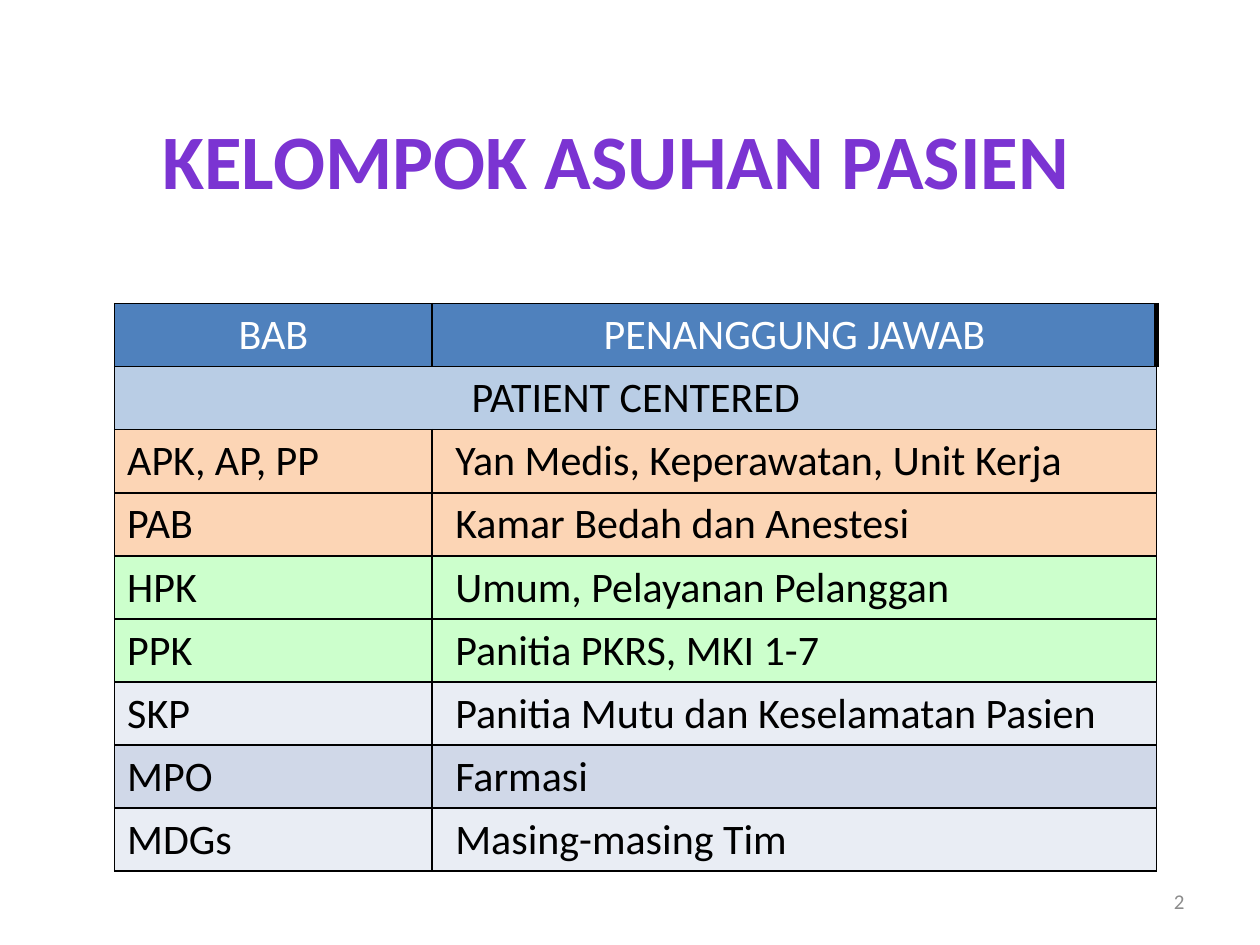
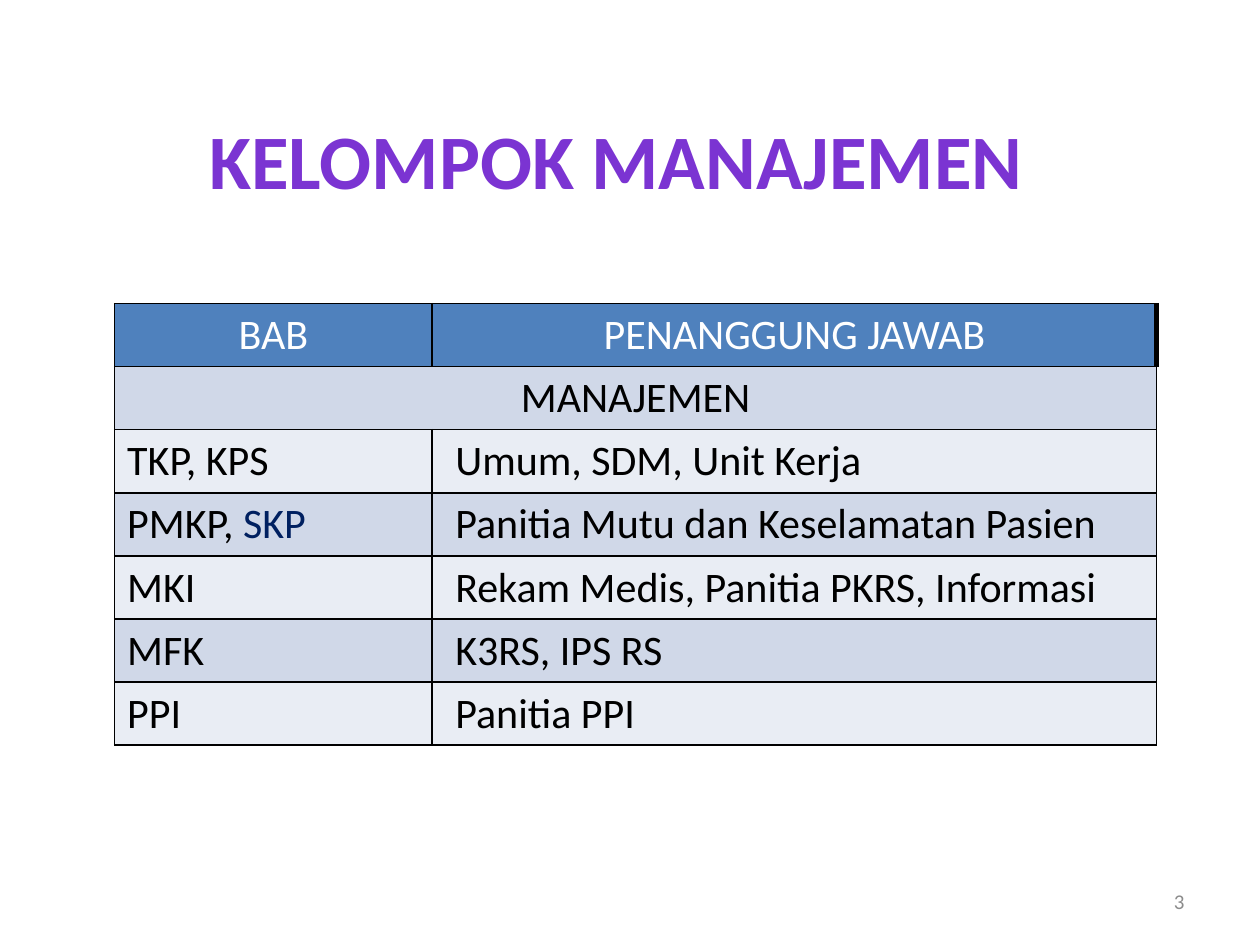
from dataclasses import dataclass

from lxml import etree
from pptx import Presentation
from pptx.dml.color import RGBColor
from pptx.enum.text import MSO_ANCHOR, MSO_AUTO_SIZE, PP_ALIGN
from pptx.oxml.ns import qn
from pptx.util import Pt

LEFT, CENTER, RIGHT = PP_ALIGN.LEFT, PP_ALIGN.CENTER, PP_ALIGN.RIGHT
MIDDLE = MSO_ANCHOR.MIDDLE
FIT_SHAPE = MSO_AUTO_SIZE.SHAPE_TO_FIT_TEXT

FONT = "Calibri"
BLACK = RGBColor(0x00, 0x00, 0x00)
WHITE = RGBColor(0xFF, 0xFF, 0xFF)
GREY = RGBColor(0x8C, 0x8C, 0x8C)
NAVY = RGBColor(0x00, 0x20, 0x60)
HEADER_BLUE = RGBColor(0x4F, 0x81, 0xBD)
SECTION_BLUE = RGBColor(0xB9, 0xCD, 0xE5)
PEACH = RGBColor(0xFC, 0xD5, 0xB5)
MINT = RGBColor(0xCC, 0xFF, 0xCC)
PALE = RGBColor(0xE9, 0xED, 0xF4)
BAND = RGBColor(0xD0, 0xD8, 0xE8)
TITLE_OUTLINE = RGBColor(0x5E, 0x45, 0x7C)
DEEP_PURPLE = RGBColor(0x3D, 0x1B, 0x67)
TITLE_STOPS = (
    (0, DEEP_PURPLE),
    (43, RGBColor(0x7B, 0x34, 0xD2)),
    (48, RGBColor(0x73, 0x30, 0xC4)),
    (100, DEEP_PURPLE),
)

TITLE_CENTER, TITLE_TOP, TITLE_HEIGHT = 352.2, 60.5, 60.5
TABLE_LEFT, TABLE_TOP, ROW_HEIGHT = 65.5, 173.5, 36
COLUMN_WIDTHS = (181.5, 414)
HEADINGS = ("BAB", "PENANGGUNG JAWAB")


@dataclass(frozen=True)
class Row:
    chapter: str
    owner: str
    fill: RGBColor
    accent: str = ""


@dataclass(frozen=True)
class Group:
    number: int
    title: str
    title_width: float
    section: str
    section_fill: RGBColor
    rows: tuple[Row, ...]


GROUPS = (
    Group(2, "KELOMPOK ASUHAN PASIEN", 541.5, "PATIENT CENTERED", SECTION_BLUE, (
        Row("APK, AP, PP", "Yan Medis, Keperawatan, Unit Kerja", PEACH),
        Row("PAB", "Kamar Bedah dan Anestesi", PEACH),
        Row("HPK", "Umum, Pelayanan Pelanggan", MINT),
        Row("PPK", "Panitia PKRS, MKI 1-7", MINT),
        Row("SKP", "Panitia Mutu dan Keselamatan Pasien", PALE),
        Row("MPO", "Farmasi", BAND),
        Row("MDGs", "Masing-masing Tim", PALE),
    )),
    Group(3, "KELOMPOK MANAJEMEN", 484.5, "MANAJEMEN", BAND, (
        Row("TKP, KPS", "Umum, SDM, Unit Kerja", PALE),
        Row("PMKP, ", "Panitia Mutu dan Keselamatan Pasien", BAND, accent="SKP"),
        Row("MKI", "Rekam Medis, Panitia PKRS, Informasi", PALE),
        Row("MFK", "K3RS, IPS RS", BAND),
        Row("PPI", "Panitia PPI", PALE),
    )),
)


def add_run(p, text: str, size: float, color: RGBColor | None = None, bold: bool = False):
    r = p.add_run()
    r.text = text
    for name, value in {"name": FONT, "size": Pt(size), "bold": bold}.items():
        setattr(r.font, name, value)
    if color is not None:
        r.font.color.rgb = color
    return r


def add_color(parent, color: RGBColor) -> None:
    etree.SubElement(parent, qn("a:srgbClr"), val=str(color))


def add_line(parent, tag: str, color: RGBColor, width: float):
    ln = etree.SubElement(parent, qn(tag), w=str(Pt(width)))
    add_color(etree.SubElement(ln, qn("a:solidFill")), color)
    return ln


def style_title(r) -> None:
    """Give the run its outline and its vertical gradient."""
    props = r.font._element
    ln = add_line(props, "a:ln", TITLE_OUTLINE, 0.71)
    grad = etree.SubElement(props, qn("a:gradFill"))
    stops = etree.SubElement(grad, qn("a:gsLst"))
    for percent, color in TITLE_STOPS:
        add_color(etree.SubElement(stops, qn("a:gs"), pos=str(percent * 1000)), color)
    etree.SubElement(grad, qn("a:lin"), ang="5400000", scaled="0")
    props.insert(0, ln)
    props.insert(1, grad)


def add_title(s, group: Group) -> None:
    left = TITLE_CENTER - group.title_width / 2
    tf = s.shapes.add_textbox(
        Pt(left), Pt(TITLE_TOP), Pt(group.title_width), Pt(TITLE_HEIGHT)).text_frame
    tf.word_wrap = False
    tf.auto_size = FIT_SHAPE
    p = tf.paragraphs[0]
    p.alignment = CENTER
    style_title(add_run(p, group.title, 44, bold=True))


def add_page_number(s, number: int) -> None:
    tf = s.shapes.add_textbox(Pt(516), Pt(500.5), Pt(168), Pt(28.75)).text_frame
    tf.word_wrap = True
    tf.vertical_anchor = MIDDLE
    p = tf.paragraphs[0]
    p.alignment = RIGHT
    add_run(p, str(number), 12, GREY)


def fill_cell(cell, text: str, fill: RGBColor, color: RGBColor = BLACK,
              align=LEFT, indent: float = 0, right_border: float = 1):
    """Write and format one cell, and return its paragraph."""
    props = cell._tc.get_or_add_tcPr()
    for side in "LRTB":
        add_line(props, f"a:ln{side}", BLACK, right_border if side == "R" else 1)
    cell.fill.solid()
    cell.fill.fore_color.rgb = fill
    p = cell.text_frame.paragraphs[0]
    p.alignment = align
    if indent:
        p._p.get_or_add_pPr().set("marL", str(Pt(indent)))
    if text:
        add_run(p, text, 24, color)
    return p


def add_group_table(s, group: Group) -> None:
    count = len(group.rows) + 2
    table = s.shapes.add_table(
        count, len(COLUMN_WIDTHS), Pt(TABLE_LEFT), Pt(TABLE_TOP),
        Pt(sum(COLUMN_WIDTHS)), Pt(ROW_HEIGHT * count)).table
    table.first_row = table.horz_banding = False
    for column, width in zip(table.columns, COLUMN_WIDTHS):
        column.width = Pt(width)

    for i, heading in enumerate(HEADINGS):
        fill_cell(table.cell(0, i), heading, HEADER_BLUE, WHITE, CENTER,
                  right_border=3 if heading == HEADINGS[-1] else 1)

    table.cell(1, 0).merge(table.cell(1, 1))
    for i, text in enumerate((group.section, "")):
        fill_cell(table.cell(1, i), text, group.section_fill, align=CENTER)

    for i, row in enumerate(group.rows, start=2):
        p = fill_cell(table.cell(i, 0), row.chapter, row.fill)
        if row.accent:
            add_run(p, row.accent, 24, NAVY)
        fill_cell(table.cell(i, 1), row.owner, row.fill, indent=6)


def main() -> None:
    prs = Presentation()
    prs.slide_width, prs.slide_height = Pt(720), Pt(540)
    for group in GROUPS:
        s = prs.slides.add_slide(prs.slide_layouts[6])
        add_page_number(s, group.number)
        add_group_table(s, group)
        add_title(s, group)
    prs.save("out.pptx")


if __name__ == "__main__":
    main()
